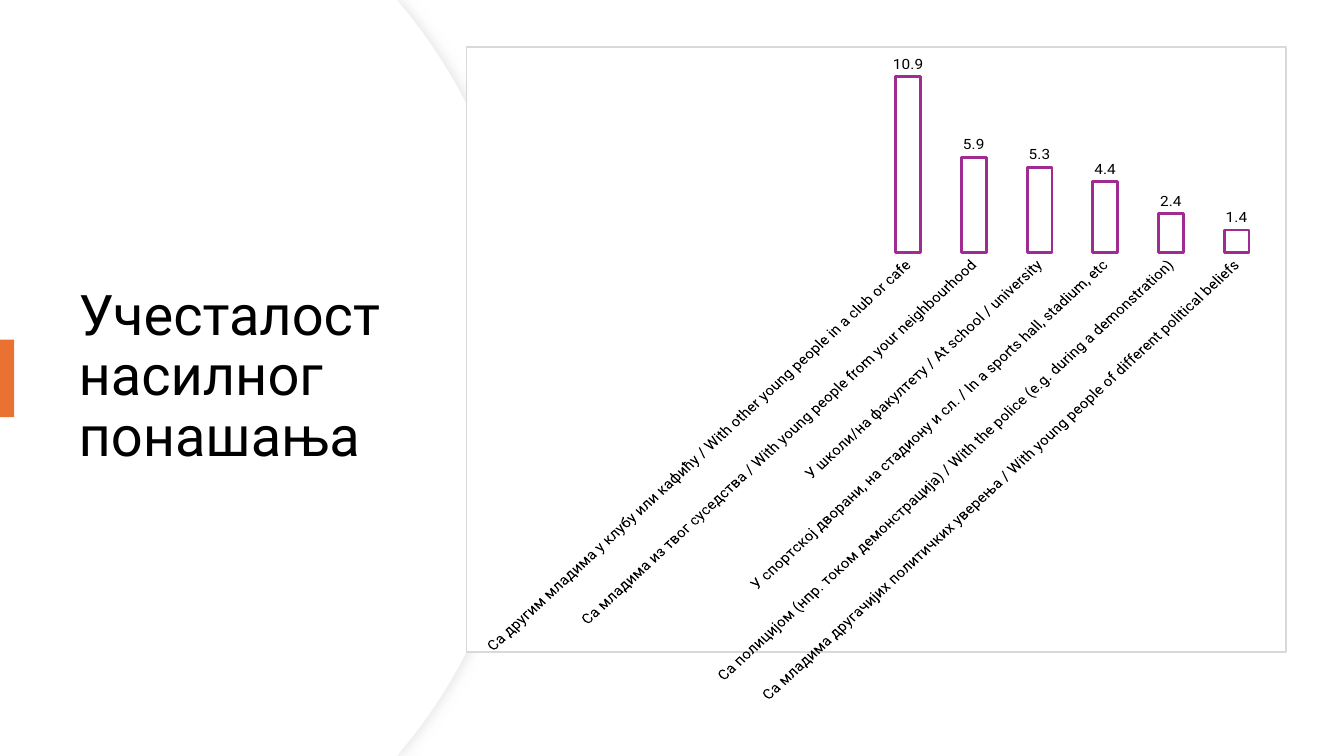
import dataclasses

import pptx
import pptx.chart.data
import pptx.dml.color
import pptx.enum.chart
import pptx.enum.shapes
import pptx.enum.text
import pptx.oxml
import pptx.oxml.ns
import pptx.util
from pptx.util import Inches


@dataclasses.dataclass(frozen=True)
class Theme:
    font: str = "Roboto"
    title_size: int = 40
    chart_size: int = 11
    text: str = "000000"
    panel: str = "FFFFFF"
    panel_edge: str = "EFEFEF"
    shadow: str = "D9D9D9"
    accent: str = "E97132"
    column: str = "A02B93"
    chart_border: str = "D9D9D9"


THEME = Theme()
SLIDE_WIDTH, SLIDE_HEIGHT = 13.33, 7.5
NUMBER_FORMAT = "###0.0"
BEHAVIOURS = [
    ("Са другим младима у клубу или кафићу / With other young people in a club or cafe", 10.9),
    ("Са младима из твог суседства / With young people from your neighbourhood", 5.9),
    ("У школи/на факултету / At school / university", 5.3),
    ("У спортској дворани, на стадиону и сл. / In a sports hall, stadium, etc", 4.4),
    ("Са полицијом (нпр. током демонстрација) / With the police (e.g. during a demonstration)", 2.4),
    ("Са младима другачијих политичких уверења / With young people of different political beliefs", 1.4),
]


def rgb(value):
    return pptx.dml.color.RGBColor.from_string(value)


def set_font(font, size):
    font.name = THEME.font
    font.size = pptx.util.Pt(size)
    font.color.rgb = rgb(THEME.text)


def parse_drawing(tag, content, attributes=""):
    namespaces = pptx.oxml.ns.nsdecls("a", "c")
    return pptx.oxml.parse_xml(f"<{tag} {namespaces} {attributes}>{content}</{tag}>")


def bend_segment(segment, *points):
    content = "".join(f'<a:pt x="{Inches(x)}" y="{Inches(y)}"/>' for x, y in points)
    segment.getparent().replace(segment, parse_drawing("a:cubicBezTo", content))


def add_curved_panel(slide, right):
    middle = SLIDE_HEIGHT / 2
    shoulder, control = right - 1.26, right - 0.48
    outline = [
        (3.94, 0), (shoulder, 0.08), (right, middle), (shoulder, SLIDE_HEIGHT - 0.08),
        (3.94, SLIDE_HEIGHT), (0, SLIDE_HEIGHT),
    ]
    builder = slide.shapes.build_freeform(0, 0, scale=1.0)
    builder.add_line_segments([(Inches(x), Inches(y)) for x, y in outline], close=True)
    panel = builder.convert_to_shape()
    segments = list(panel._element.iter(pptx.oxml.ns.qn("a:lnTo")))
    upper = [(control, 1.02), (right, 2.32), (right, middle)]
    lower = [(right, SLIDE_HEIGHT - 2.32), (control, SLIDE_HEIGHT - 1.02), outline[3]]
    bend_segment(segments[2], *upper)
    bend_segment(segments[3], *lower)
    panel.shadow.inherit = False
    panel.fill.solid()
    panel.fill.fore_color.rgb = rgb(THEME.panel)
    panel.line.fill.background()
    return panel


def add_edge_and_shadow(panel):
    panel.line.color.rgb = rgb(THEME.panel_edge)
    panel.line.width = pptx.util.Pt(0.75)
    effects = panel._element.spPr.find(pptx.oxml.ns.qn("a:effectLst"))
    color = f'<a:srgbClr val="{THEME.shadow}"><a:alpha val="50000"/></a:srgbClr>'
    blur, distance = pptx.util.Pt(7), pptx.util.Pt(3)
    effects.append(parse_drawing("a:outerShdw", color, f'blurRad="{blur}" dist="{distance}" dir="0"'))


def add_accent_bar(slide):
    bar = slide.shapes.add_shape(
        pptx.enum.shapes.MSO_SHAPE.RECTANGLE, Inches(0), Inches(3.37), Inches(0.14), Inches(0.77)
    )
    bar.shadow.inherit = False
    bar.fill.solid()
    bar.fill.fore_color.rgb = rgb(THEME.accent)
    bar.line.fill.background()


def place_title(slide, text):
    title = slide.shapes.title
    slide.shapes._spTree.append(title._element)
    title.left, title.top = Inches(0.68), Inches(1.27)
    title.width, title.height = Inches(3.94), Inches(4.95)
    frame = title.text_frame
    frame.text = text
    frame.word_wrap = True
    frame.auto_size = pptx.enum.text.MSO_AUTO_SIZE.NONE
    frame.vertical_anchor = pptx.enum.text.MSO_ANCHOR.MIDDLE
    paragraph = frame.paragraphs[0]
    paragraph.alignment = pptx.enum.text.PP_ALIGN.LEFT
    paragraph.line_spacing = 0.9
    set_font(paragraph.font, THEME.title_size)


def format_axes(chart):
    category_axis = chart.category_axis
    category_axis.major_tick_mark = pptx.enum.chart.XL_TICK_MARK.NONE
    category_axis.format.line.fill.background()
    set_font(category_axis.tick_labels.font, THEME.chart_size)
    body = category_axis._element.find(pptx.oxml.ns.qn("c:txPr")).find(pptx.oxml.ns.qn("a:bodyPr"))
    body.set("rot", str(-45 * 60000))
    body.set("vert", "horz")
    value_axis = chart.value_axis
    value_axis.visible = False
    value_axis.has_major_gridlines = False
    value_axis.tick_labels.number_format = NUMBER_FORMAT
    value_axis.tick_labels.number_format_is_linked = False


def format_columns(plot):
    plot.gap_width, plot.overlap = 164, -35
    plot.vary_by_categories = False
    series = plot.series[0]
    series.format.fill.background()
    series.format.line.color.rgb = rgb(THEME.column)
    series.format.line.width = pptx.util.Pt(2)
    labels = series.data_labels
    labels.show_value = True
    labels.position = pptx.enum.chart.XL_LABEL_POSITION.OUTSIDE_END
    labels.number_format = NUMBER_FORMAT
    labels.number_format_is_linked = False
    set_font(labels.font, THEME.chart_size)


def format_chart_area(chart):
    fill, border = (
        f'<a:solidFill><a:srgbClr val="{color}"/></a:solidFill>'
        for color in (THEME.panel, THEME.chart_border)
    )
    area = parse_drawing("c:spPr", f'{fill}<a:ln w="{pptx.util.Pt(1)}">{border}</a:ln>')
    chart._chartSpace.find(pptx.oxml.ns.qn("c:chart")).addnext(area)


def add_behaviour_chart(slide):
    data = pptx.chart.data.CategoryChartData(number_format=NUMBER_FORMAT)
    categories, values = zip(*BEHAVIOURS)
    data.categories = categories
    data.add_series("Series 1", values)
    chart = slide.shapes.add_chart(
        pptx.enum.chart.XL_CHART_TYPE.COLUMN_CLUSTERED,
        Inches(4.62), Inches(0.46), Inches(8.14), Inches(6.52), data,
    ).chart
    chart.has_title = False
    chart.has_legend = False
    set_font(chart.font, THEME.chart_size)
    format_axes(chart)
    format_columns(chart.plots[0])
    format_chart_area(chart)


def main():
    presentation = pptx.Presentation()
    presentation.slide_width = Inches(SLIDE_WIDTH)
    presentation.slide_height = Inches(SLIDE_HEIGHT)
    slide = presentation.slides.add_slide(presentation.slide_layouts[5])
    add_edge_and_shadow(add_curved_panel(slide, 5.27))
    add_curved_panel(slide, 5.26)
    place_title(slide, "Учесталост насилног понашања")
    add_accent_bar(slide)
    add_behaviour_chart(slide)
    presentation.save("out.pptx")


if __name__ == "__main__":
    main()
